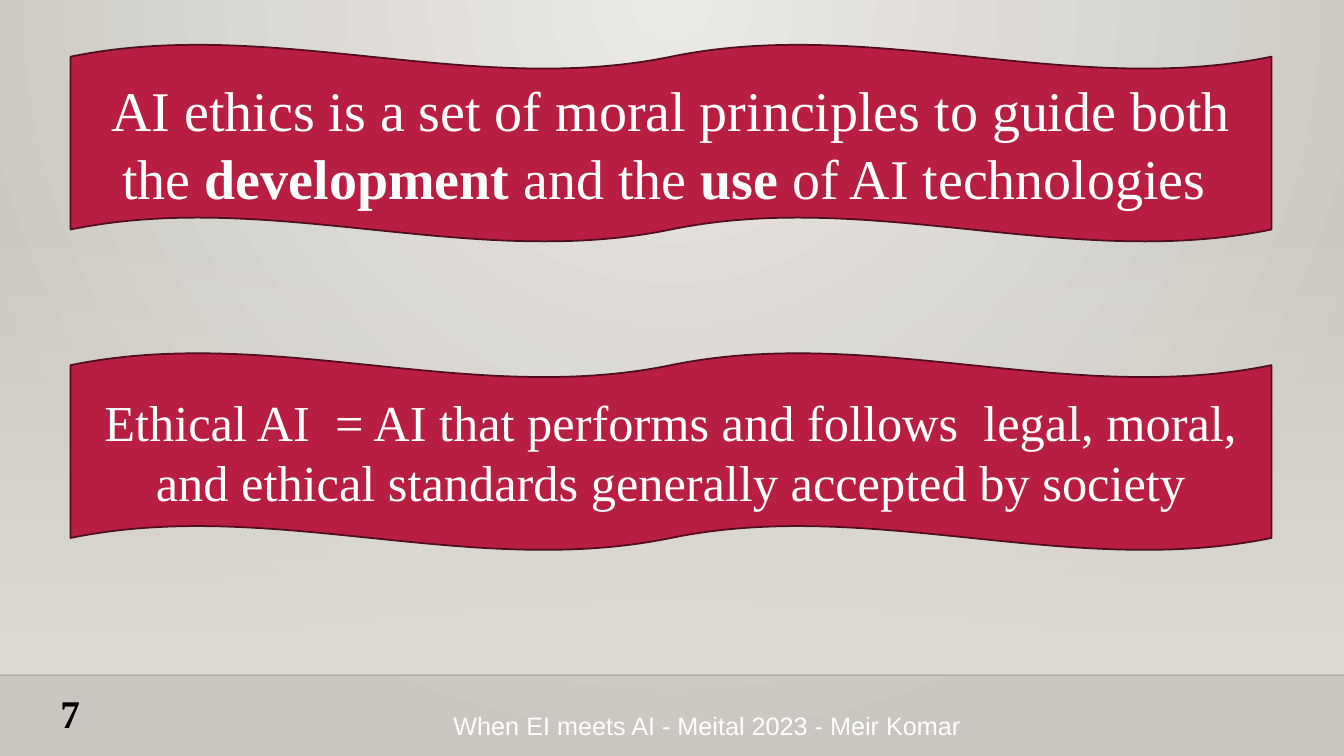
from dataclasses import dataclass

from lxml import etree
from pptx import Presentation
from pptx import util as u
from pptx.dml.color import RGBColor
from pptx.enum import shapes, text
from pptx.oxml import ns

WIDTH, HEIGHT = u.Inches(13.33), u.Inches(7.5)


@dataclass(frozen=True)
class Theme:
    serif: str = "Times New Roman"
    sans: str = "Arial"
    glow: str = "ECEAE7"
    edge: str = "CAC7C1"
    veil: str = "DFDBD5"
    rule: str = "000001"
    banner: str = "B71E42"
    outline: str = "500D1D"
    light: str = "FFFFFF"
    dark: str = "000000"
    large: int = 40
    medium: int = 36
    number: int = 28
    footer: int = 18


THEME = Theme()
FLOOR = 0.893
BANNER_LEFT, BANNER_WIDTH, BANNER_HEIGHT = 0.0525, 0.8935, 0.2613
FIRST_BANNER, BANNER_STEP = 0.0587, 0.408


def area(left, top, width, height):
    """Turn shares of the slide's size into lengths."""
    return (u.Emu(round(left * WIDTH)), u.Emu(round(top * HEIGHT)),
            u.Emu(round(width * WIDTH)), u.Emu(round(height * HEIGHT)))


def child(parent, tag, **attributes):
    return etree.SubElement(parent, ns.qn(tag), attributes)


def set_alpha(element, percent):
    color = next(element.iter(ns.qn("a:srgbClr")))
    child(color, "a:alpha", val=str(percent * 1000))


def set_gradient(fill, start, end):
    fill.gradient()
    for stop, color, position in zip(fill.gradient_stops, (start, end), (0, 1)):
        stop.color.rgb = RGBColor.from_string(color)
        stop.position = position


def paint_background(page):
    """Spread a circular glow from the middle of the top edge."""
    set_gradient(page.background.fill, THEME.glow, THEME.edge)
    gradient = next(page.element.iter(ns.qn("a:gradFill")))
    gradient.remove(gradient.find(ns.qn("a:lin")))
    circle = child(gradient, "a:path", path="circle")
    child(circle, "a:fillToRect", l="43000", t="0", r="43000", b="100000")


def add_veil(page):
    veil = page.shapes.add_shape(shapes.MSO_SHAPE.RECTANGLE, *area(0, 0.295, 1, FLOOR - 0.295))
    veil.shadow.inherit = False
    veil.line.fill.background()
    set_gradient(veil.fill, THEME.veil, THEME.veil)
    veil.fill.gradient_angle = 270
    set_alpha(veil.element.spPr, 0)


def add_floor_line(page):
    left, top, width, _ = area(0, FLOOR, 1, 0)
    line = page.shapes.add_connector(shapes.MSO_CONNECTOR.STRAIGHT, left, top, width, top)
    line.line.color.rgb = RGBColor.from_string(THEME.rule)
    line.line.width = u.Pt(1)
    set_alpha(line.element.spPr, 20)
    child(line.element.spPr, "a:effectLst")


def write(box, spans, font, size, color, align, anchor):
    """Fill a box with one paragraph of (wording, bold) spans."""
    frame = box.text_frame
    frame.word_wrap = True
    frame.vertical_anchor = anchor
    para = frame.paragraphs[0]
    para.alignment = align
    for wording, bold in spans:
        span = para.add_run()
        span.text = wording
        span.font.name, span.font.size, span.font.bold = font, u.Pt(size), bold
        span.font.color.rgb = RGBColor.from_string(color)


def add_banner(page, row, spans, size):
    top = FIRST_BANNER + row * BANNER_STEP
    banner = page.shapes.add_shape(shapes.MSO_SHAPE.DOUBLE_WAVE,
                                   *area(BANNER_LEFT, top, BANNER_WIDTH, BANNER_HEIGHT))
    banner.shadow.inherit = False
    banner.fill.solid()
    banner.fill.fore_color.rgb = RGBColor.from_string(THEME.banner)
    banner.line.color.rgb = RGBColor.from_string(THEME.outline)
    banner.line.width = u.Pt(1.25)
    write(banner, spans, THEME.serif, size, THEME.light,
          text.PP_ALIGN.CENTER, text.MSO_ANCHOR.MIDDLE)


def add_footer(page):
    footer = page.shapes.add_textbox(*area(0.33, 0.94, 0.657, 0.0387))
    write(footer, [("When EI meets AI - Meital 2023 - Meir Komar", False)],
          THEME.sans, THEME.footer, THEME.light, text.PP_ALIGN.LEFT, text.MSO_ANCHOR.MIDDLE)
    number = page.shapes.add_textbox(*area(0, 0.9053, 0.0668, 0.0733))
    write(number, [("7", True)], THEME.serif, THEME.number, THEME.dark,
          text.PP_ALIGN.RIGHT, text.MSO_ANCHOR.TOP)


def main():
    deck = Presentation()
    deck.slide_width, deck.slide_height = WIDTH, HEIGHT
    page = deck.slides.add_slide(deck.slide_layouts.get_by_name("Blank"))
    paint_background(page)
    add_veil(page)
    add_floor_line(page)
    add_footer(page)
    add_banner(page, 0, [
        ("AI ethics is a set of moral principles to guide both the ", False),
        ("development", True),
        (" and the ", False),
        ("use", True),
        (" of AI technologies ", False),
    ], THEME.large)
    add_banner(page, 1, [
        ("Ethical AI  = AI that performs and follows  legal, moral, "
         "and ethical standards generally accepted by society", False),
    ], THEME.medium)
    deck.save("out.pptx")


if __name__ == "__main__":
    main()
